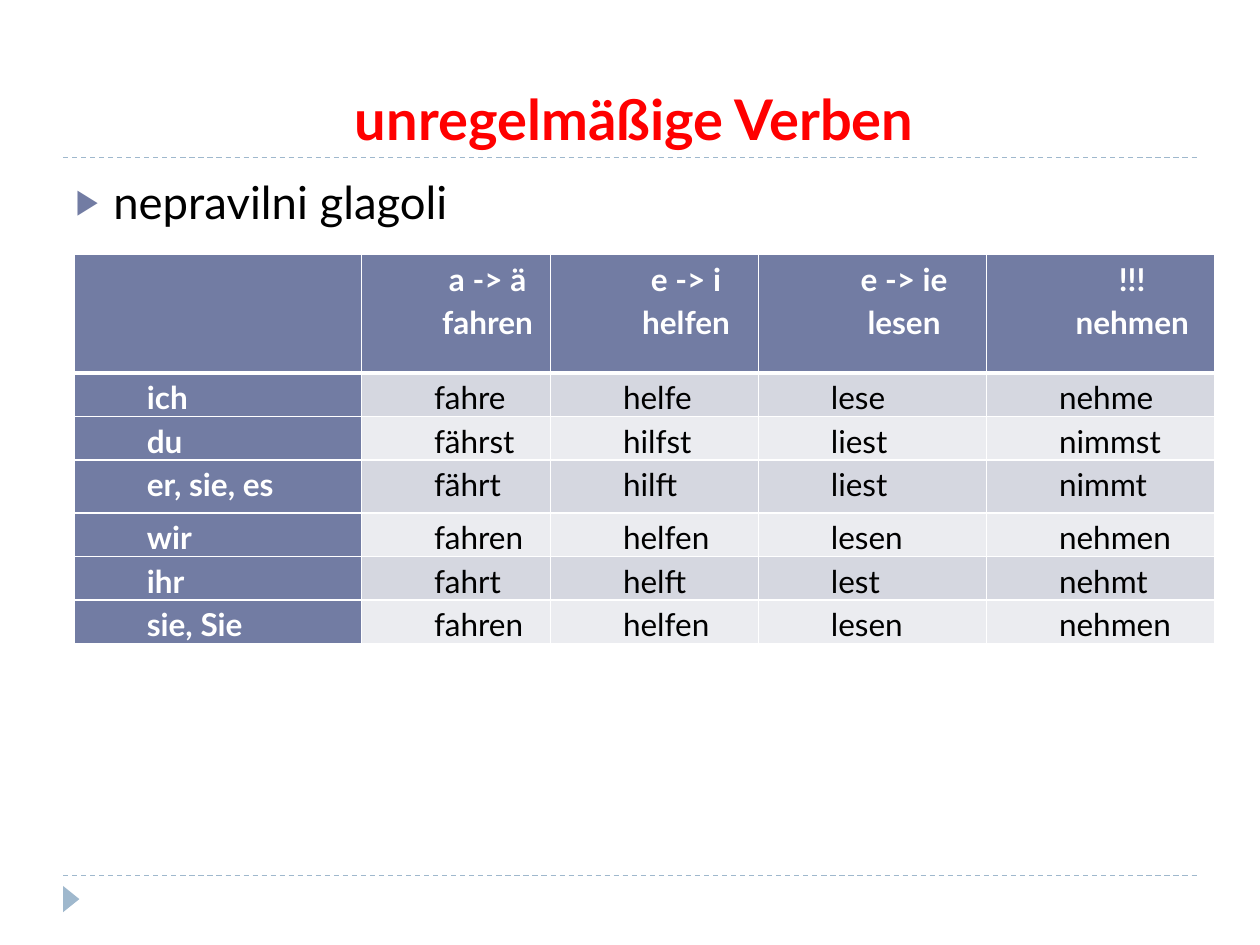
"""Build a slide with a table of irregular German verbs."""
from typing import NamedTuple

from lxml.etree import SubElement
from pptx import Presentation
from pptx.dml.color import RGBColor
from pptx.enum.dml import MSO_LINE
from pptx.enum.shapes import MSO_CONNECTOR, MSO_SHAPE
from pptx.enum.text import MSO_ANCHOR, MSO_AUTO_SIZE, PP_ALIGN
from pptx.oxml.ns import qn
from pptx.util import Cm, Pt

FONT = "Lato"
COLORS = {
    "title": "FF0000",
    "text": "000000",
    "white": "FFFFFF",
    "header": "727CA3",
    "accent": "9FB8CD",
    "odd_band": "D5D7E0",
    "even_band": "EBECF0",
}
COLUMN_WIDTHS = (5.79, 3.81, 4.19, 4.6, 4.6)
ROW_HEIGHTS = (2.39, 0.76, 0.76, 1.07, 0.76, 0.76, 0.76)
HEADINGS = ("", "a -> ä\nfahren", "e -> i\nhelfen", "e -> ie\nlesen", "!!!\nnehmen")


class Conjugation(NamedTuple):
    pronoun: str
    fahren: str
    helfen: str
    lesen: str
    nehmen: str


CONJUGATIONS = (
    Conjugation("ich", "fahre", "helfe", "lese", "nehme"),
    Conjugation("du", "fährst", "hilfst", "liest", "nimmst"),
    Conjugation("er, sie, es", "fährt", "hilft", "liest", "nimmt"),
    Conjugation("wir", "fahren", "helfen", "lesen", "nehmen"),
    Conjugation("ihr", "fahrt", "helft", "lest", "nehmt"),
    Conjugation("sie, Sie", "fahren", "helfen", "lesen", "nehmen"),
)


def color(name: str) -> RGBColor:
    return RGBColor.from_string(COLORS[name])


def write_text(text_frame, text: str, *, size: float, fill: str, bold: bool = False,
               align=PP_ALIGN.LEFT, indent: float = 0, hanging: float = 0,
               line_spacing: float = 1, space_before: float = 0) -> None:
    for index, line in enumerate(text.split("\n")):
        paragraph = text_frame.add_paragraph() if index else text_frame.paragraphs[0]
        paragraph.alignment = align
        paragraph.line_spacing = line_spacing
        paragraph.space_before = Pt(space_before)
        properties = paragraph._p.get_or_add_pPr()
        properties.set("marL", str(Cm(indent)))
        properties.set("indent", str(Cm(-hanging)))
        run = paragraph.add_run()
        run.text = line
        run.font.name = FONT
        run.font.size = Pt(size)
        run.font.bold = bold
        run.font.color.rgb = color(fill)


def place(shape, left: float, top: float, width: float, height: float) -> None:
    shape.left, shape.top = Cm(left), Cm(top)
    shape.width, shape.height = Cm(width), Cm(height)


def add_bullet(paragraph, character: str, fill: str, percent: int) -> None:
    properties = paragraph._p.get_or_add_pPr()
    bullet_color = SubElement(properties, qn("a:buClr"))
    SubElement(bullet_color, qn("a:srgbClr"), val=COLORS[fill])
    SubElement(properties, qn("a:buSzPct"), val=str(percent * 1000))
    SubElement(properties, qn("a:buChar"), char=character)


def add_divider(slide, top: float) -> None:
    divider = slide.shapes.add_connector(
        MSO_CONNECTOR.STRAIGHT, Cm(1.27), Cm(top), Cm(24.13), Cm(top))
    divider.line.color.rgb = color("accent")
    divider.line.width = Pt(0.75)
    divider.line.dash_style = MSO_LINE.DASH
    SubElement(divider._element.spPr, qn("a:effectLst"))


def add_marker(slide) -> None:
    marker = slide.shapes.add_shape(
        MSO_SHAPE.ISOSCELES_TRIANGLE, Cm(1.17), Cm(17.96), Cm(0.53), Cm(0.33))
    marker.rotation = 90
    marker.shadow.inherit = False
    marker.fill.solid()
    marker.fill.fore_color.rgb = color("accent")
    marker.line.fill.background()


def style_cell(cell, fill: str, bottom_width: float) -> None:
    cell.margin_left = cell.margin_right = Cm(0.19)
    cell.margin_top = cell.margin_bottom = 0
    properties = cell._tc.get_or_add_tcPr()
    for side, width in (("L", 1), ("R", 1), ("T", 1), ("B", bottom_width)):
        border = SubElement(properties, qn(f"a:ln{side}"), w=str(Pt(width)))
        border_fill = SubElement(border, qn("a:solidFill"))
        SubElement(border_fill, qn("a:srgbClr"), val=COLORS["white"])
    cell.fill.solid()
    cell.fill.fore_color.rgb = color(fill)


def add_verb_table(slide) -> None:
    rows = (HEADINGS, *CONJUGATIONS)
    table = slide.shapes.add_table(
        len(rows), len(HEADINGS), Cm(1.5), Cm(5.13),
        Cm(sum(COLUMN_WIDTHS)), Cm(sum(ROW_HEIGHTS))).table
    for column, width in zip(table.columns, COLUMN_WIDTHS):
        column.width = Cm(width)
    for row_index, (row, height) in enumerate(zip(rows, ROW_HEIGHTS)):
        table.rows[row_index].height = Cm(height)
        band = "odd_band" if row_index % 2 else "even_band"
        for column_index, text in enumerate(row):
            cell = table.cell(row_index, column_index)
            is_heading = row_index == 0 or column_index == 0
            style_cell(cell, "header" if is_heading else band, 1 if row_index else 3)
            if text:
                write_text(cell.text_frame, text, size=18, bold=is_heading,
                           fill="white" if is_heading else "text",
                           align=PP_ALIGN.LEFT if row_index else PP_ALIGN.CENTER,
                           indent=1.27, line_spacing=1.15)


def main() -> None:
    presentation = Presentation()
    presentation.slide_width, presentation.slide_height = Cm(25.4), Cm(19.05)
    slide = presentation.slides.add_slide(presentation.slide_layouts[1])
    add_divider(slide, 17.65)
    add_divider(slide, 3.18)
    add_marker(slide)

    title, body = slide.placeholders
    place(title, 1.27, 0.64, 23.04, 2.54)
    title.text_frame.vertical_anchor = MSO_ANCHOR.BOTTOM
    title.text_frame.auto_size = MSO_AUTO_SIZE.NONE
    write_text(title.text_frame, "unregelmäßige Verben", size=32, fill="title",
               bold=True, align=PP_ALIGN.CENTER)

    place(body, 1.27, 3.38, 22.43, 13.72)
    body.text_frame.auto_size = MSO_AUTO_SIZE.NONE
    write_text(body.text_frame, "nepravilni glagoli", size=26, fill="text",
               indent=0.76, hanging=0.76, space_before=6)
    add_bullet(body.text_frame.paragraphs[0], "▶", "header", 76)

    add_verb_table(slide)
    presentation.save("out.pptx")


if __name__ == "__main__":
    main()
